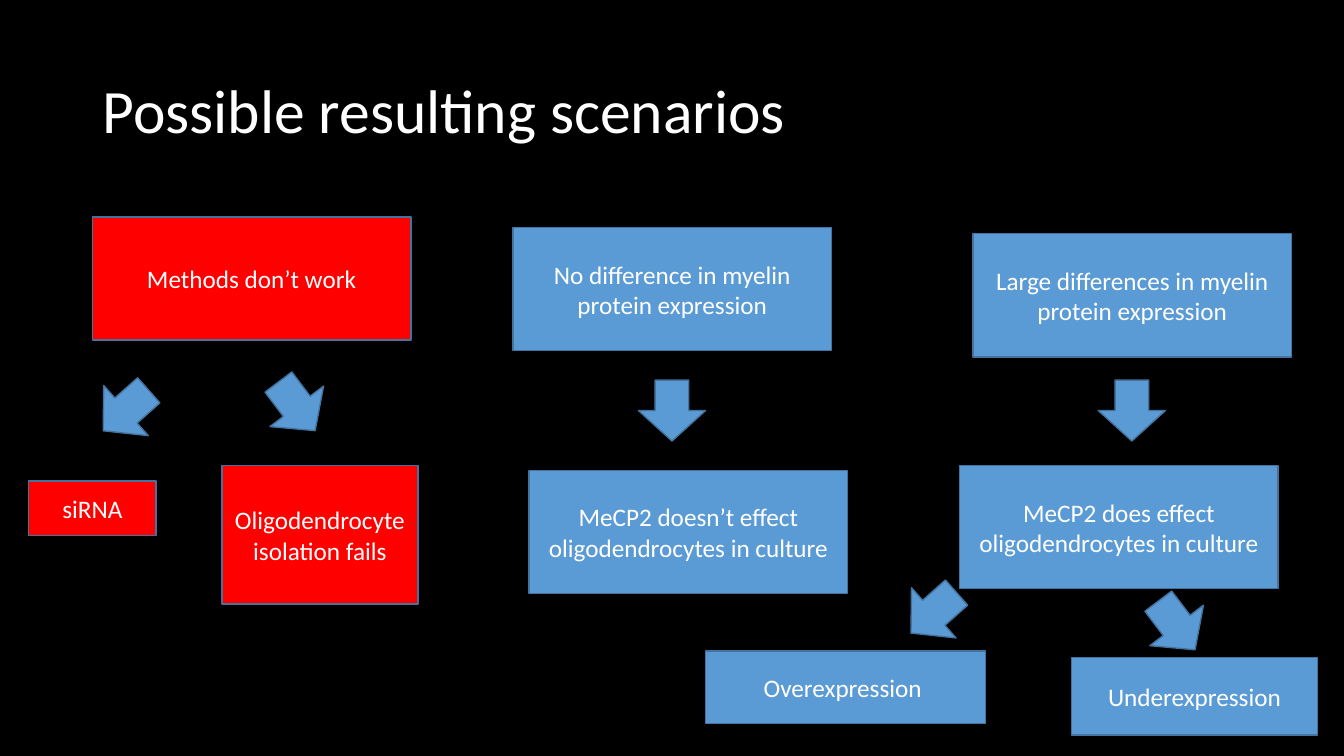
import pptx
import pptx.dml.color
import pptx.enum.shapes
import pptx.enum.text
import pptx.util

BLACK = pptx.dml.color.RGBColor(0x00, 0x00, 0x00)
WHITE = pptx.dml.color.RGBColor(0xFF, 0xFF, 0xFF)
RED = pptx.dml.color.RGBColor(0xFF, 0x00, 0x00)
BLUE = pptx.dml.color.RGBColor(0x5B, 0x9B, 0xD5)
OUTLINE = pptx.dml.color.RGBColor(0x43, 0x73, 0x9E)

FONT = "Calibri"
BOX_SIZE = (227.5, 88)
ARROW_SIZE = (48, 43.5)
DOWN_LEFT = 48.4
DOWN_RIGHT = 322.9

BOXES = [
    ("Methods don’t work", RED, (66, 155), BOX_SIZE),
    ("No difference in myelin protein expression", BLUE, (366.5, 162.5), BOX_SIZE),
    ("Large differences in myelin protein expression", BLUE, (695, 167), BOX_SIZE),
    ("siRNA", RED, (20.5, 343.5), (91, 39)),
    ("Oligodendrocyte isolation fails", RED, (158.5, 332.5), (140, 99)),
    ("MeCP2 doesn’t effect oligodendrocytes in culture", BLUE, (378, 336), BOX_SIZE),
    ("MeCP2 does effect oligodendrocytes in culture", BLUE, (685.5, 332.5), BOX_SIZE),
    ("Underexpression", BLUE, (765.5, 469.5), (175.5, 55.5)),
    ("Overexpression ", BLUE, (504, 465), (200, 52)),
]

ARROWS = [
    ((66, 271.5), DOWN_LEFT),
    ((188, 268.5), DOWN_RIGHT),
    ((456, 271.5), 0),
    ((784.5, 271.5), 0),
    ((643, 416), DOWN_LEFT),
    ((816.5, 425), DOWN_RIGHT),
]


def format_text(text_frame, size, alignment):
    """Wrap and centre the text vertically, and style its paragraphs."""
    text_frame.word_wrap = True
    text_frame.vertical_anchor = pptx.enum.text.MSO_ANCHOR.MIDDLE
    for paragraph in text_frame.paragraphs:
        paragraph.alignment = alignment
        paragraph.font.name = FONT
        paragraph.font.size = pptx.util.Pt(size)
        paragraph.font.color.rgb = WHITE


def set_title(slide, text):
    """Fill, place and format the title placeholder."""
    title = slide.shapes.title
    title.left, title.top = pptx.util.Pt(66), pptx.util.Pt(28.75)
    title.width, title.height = pptx.util.Pt(828), pptx.util.Pt(104.5)
    title.text_frame.text = text
    title.text_frame.auto_size = pptx.enum.text.MSO_AUTO_SIZE.NONE
    format_text(title.text_frame, 44, pptx.enum.text.PP_ALIGN.LEFT)
    title.text_frame.paragraphs[0].line_spacing = 0.9


def add_outlined_shape(slide, kind, position, size, fill):
    """Add a filled preset shape with the common outline and no shadow."""
    lengths = [pptx.util.Pt(value) for value in (*position, *size)]
    shape = slide.shapes.add_shape(kind, *lengths)
    shape.shadow.inherit = False
    shape.fill.solid()
    shape.fill.fore_color.rgb = fill
    shape.line.color.rgb = OUTLINE
    shape.line.width = pptx.util.Pt(1)
    return shape


def add_box(slide, text, fill, position, size):
    """Add a rectangle holding one scenario."""
    kind = pptx.enum.shapes.MSO_SHAPE.RECTANGLE
    box = add_outlined_shape(slide, kind, position, size, fill)
    box.text_frame.text = text
    format_text(box.text_frame, 18, pptx.enum.text.PP_ALIGN.CENTER)


def add_arrow(slide, position, rotation):
    """Add a block arrow turned from pointing straight down."""
    kind = pptx.enum.shapes.MSO_SHAPE.DOWN_ARROW
    arrow = add_outlined_shape(slide, kind, position, ARROW_SIZE, BLUE)
    arrow.rotation = rotation


def main():
    """Build the scenario slide and save it."""
    presentation = pptx.Presentation()
    presentation.slide_width = pptx.util.Pt(960)
    presentation.slide_height = pptx.util.Pt(540)
    slide = presentation.slides.add_slide(presentation.slide_layouts[5])
    slide.background.fill.solid()
    slide.background.fill.fore_color.rgb = BLACK
    set_title(slide, "Possible resulting scenarios")
    for box in BOXES:
        add_box(slide, *box)
    for arrow in ARROWS:
        add_arrow(slide, *arrow)
    presentation.save("out.pptx")


if __name__ == "__main__":
    main()
